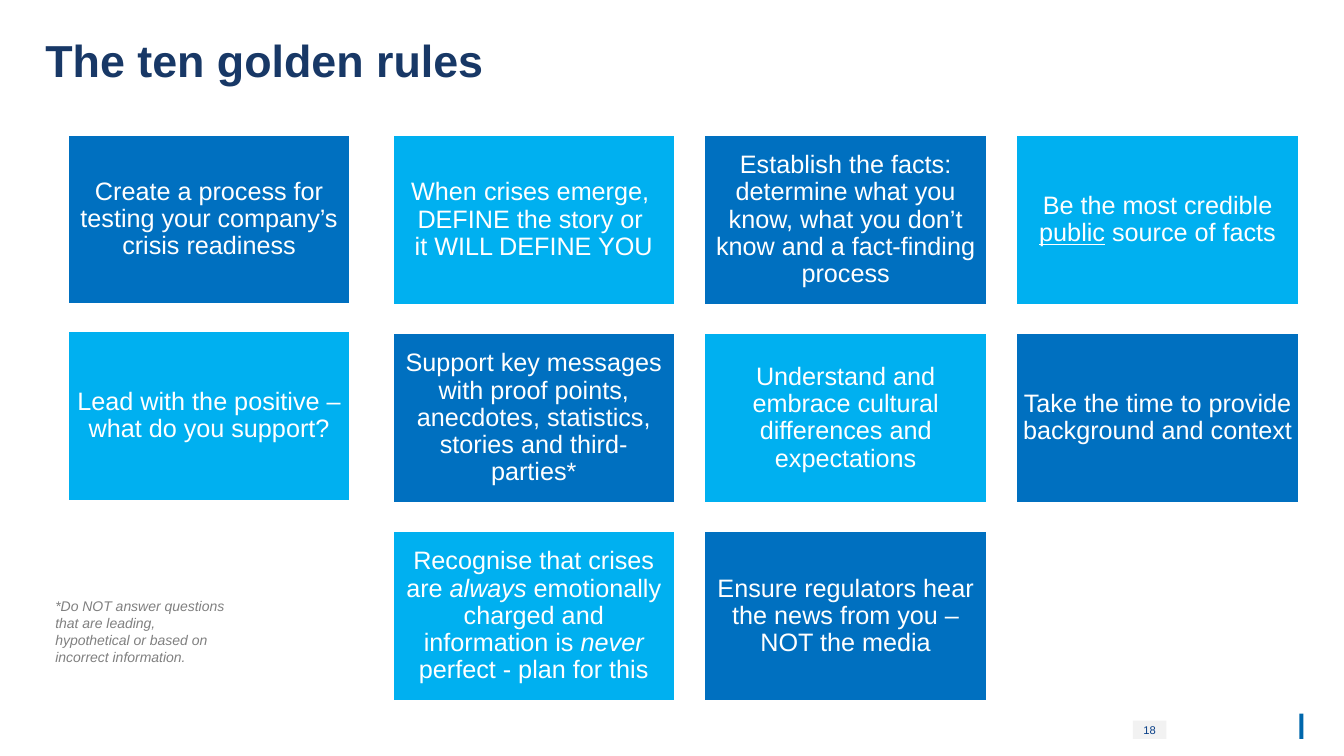
from dataclasses import dataclass
from typing import NamedTuple

from pptx import Presentation
from pptx.dml.color import RGBColor as Rgb
from pptx.enum.shapes import MSO_SHAPE as Kind
from pptx.enum.text import MSO_ANCHOR as Anchor, PP_ALIGN as Align
from pptx.shapes.autoshape import Shape
from pptx.util import Pt


@dataclass(frozen=True)
class Theme:
    font: str = "Arial"
    navy: str = "183866"
    dark: str = "0070C0"
    light: str = "00B0F0"
    white: str = "FFFFFF"
    grey: str = "808080"
    badge: str = "F2F2F2"
    page: str = "073E87"
    bar: str = "0067AC"
    head: float = 32
    body: float = 18
    note: float = 10
    foot: float = 8


class Run(NamedTuple):
    text: str
    italic: bool = False
    under: bool = False


class Box(NamedTuple):
    left: float
    top: float
    width: float
    height: float


class Rule(NamedTuple):
    row: int
    col: int
    paras: list[list[Run]]


LOOK = Theme()
TILE_W, TILE_H = 202.3, 121.7
LEFT, TOP = 280.1, 96.3
STEP_X, STEP_Y = 222.8, 141.5
SIDE_X, SIDE_Y, SIDE_STEP = 48.2, 95.8, 140.4

RULES = [
    Rule(0, 0, [[Run("Create a process for testing your company’s crisis readiness")]]),
    Rule(0, 1, [[Run("When crises emerge, ")],
                [Run("DEFINE the story or \nit WILL DEFINE YOU")]]),
    Rule(0, 2, [[Run("Establish the facts: determine what you know, what you don’t "
                     "know and a fact-finding process")]]),
    Rule(0, 3, [[Run("Be the most credible "), Run("public", under=True),
                 Run(" source of facts")]]),
    Rule(1, 0, [[Run("Lead with the positive – what do you support?")]]),
    Rule(1, 1, [[Run("Support key messages with proof points, anecdotes, "
                     "statistics, stories and third-parties*")]]),
    Rule(1, 2, [[Run("Understand and embrace cultural differences and expectations")]]),
    Rule(1, 3, [[Run("Take the time to provide background and context")]]),
    Rule(2, 1, [[Run("Recognise that crises are "), Run("always", italic=True),
                 Run(" emotionally charged and information is "),
                 Run("never", italic=True), Run(" perfect - plan for this")]]),
    Rule(2, 2, [[Run("Ensure regulators hear the news from you – NOT the media")]]),
]


def write(shape: Shape, paras: list[list[Run]], *, size: float, color: str,
          bold: bool = False, align: Align = Align.LEFT,
          anchor: Anchor = Anchor.TOP, space: float | Pt = 1.0,
          inset: tuple[float, float] = (0, 0)) -> None:
    """Fill a shape with formatted paragraphs of runs."""
    frame = shape.text_frame
    frame.word_wrap = True
    frame.vertical_anchor = anchor
    frame.margin_left = frame.margin_right = Pt(inset[0])
    frame.margin_top = frame.margin_bottom = Pt(inset[1])
    for num, runs in enumerate(paras):
        para = frame.add_paragraph() if num else frame.paragraphs[0]
        para.alignment = align
        para.line_spacing = space
        for run in runs:
            for pos, line in enumerate(run.text.split("\n")):
                if pos:
                    para.add_line_break()
                part = para.add_run()
                part.text = line
                font = part.font
                font.name, font.size = LOOK.font, Pt(size)
                font.bold, font.italic = bold, run.italic
                font.underline = run.under
                font.color.rgb = Rgb.from_string(color)


def block(shapes, box: Box, fill: str, edge: str | None = None) -> Shape:
    """Draw a flat rectangle with an optional outline."""
    shape = shapes.add_shape(Kind.RECTANGLE, *map(Pt, box))
    shape.shadow.inherit = False
    shape.fill.solid()
    shape.fill.fore_color.rgb = Rgb.from_string(fill)
    if edge:
        shape.line.color.rgb = Rgb.from_string(edge)
        shape.line.width = Pt(2)
    else:
        shape.line.fill.background()
    return shape


def label(shapes, box: Box) -> Shape:
    """Add an empty text box."""
    return shapes.add_textbox(*map(Pt, box))


def tile(shapes, rule: Rule) -> None:
    """Draw one rule on the checkered grid."""
    if rule.col:
        left = LEFT + (rule.col - 1) * STEP_X
        top = TOP + rule.row * STEP_Y
    else:
        left, top = SIDE_X, SIDE_Y + rule.row * SIDE_STEP
    fill = LOOK.light if (rule.row + rule.col) % 2 else LOOK.dark
    shape = block(shapes, Box(left, top, TILE_W, TILE_H), fill, LOOK.white)
    write(shape, rule.paras, size=LOOK.body, color=LOOK.white, align=Align.CENTER,
          anchor=Anchor.MIDDLE, space=0.9, inset=(5, 5))


def main() -> None:
    """Build the slide and save it."""
    deck = Presentation()
    deck.slide_width, deck.slide_height = Pt(960), Pt(540)
    shapes = deck.slides.add_slide(deck.slide_layouts[6]).shapes

    block(shapes, Box(928.1, 509.8, 2.9, 18), LOOK.bar)
    write(label(shapes, Box(32.4, 25.9, 644.4, 56.2)), [[Run("The ten golden rules")]],
          size=LOOK.head, color=LOOK.navy, bold=True, space=Pt(36))
    write(block(shapes, Box(809.3, 514.8, 23.8, 13), LOOK.badge), [[Run("18")]],
          size=LOOK.foot, color=LOOK.page, align=Align.CENTER, anchor=Anchor.MIDDLE)
    for rule in RULES:
        tile(shapes, rule)
    note = ("*Do NOT answer questions that are leading, hypothetical "
            "or based on incorrect information.")
    write(label(shapes, Box(32.4, 423.4, 138.2, 67.7)), [[Run(note, italic=True)]],
          size=LOOK.note, color=LOOK.grey, inset=(7.2, 3.6))

    deck.save("out.pptx")


if __name__ == "__main__":
    main()
